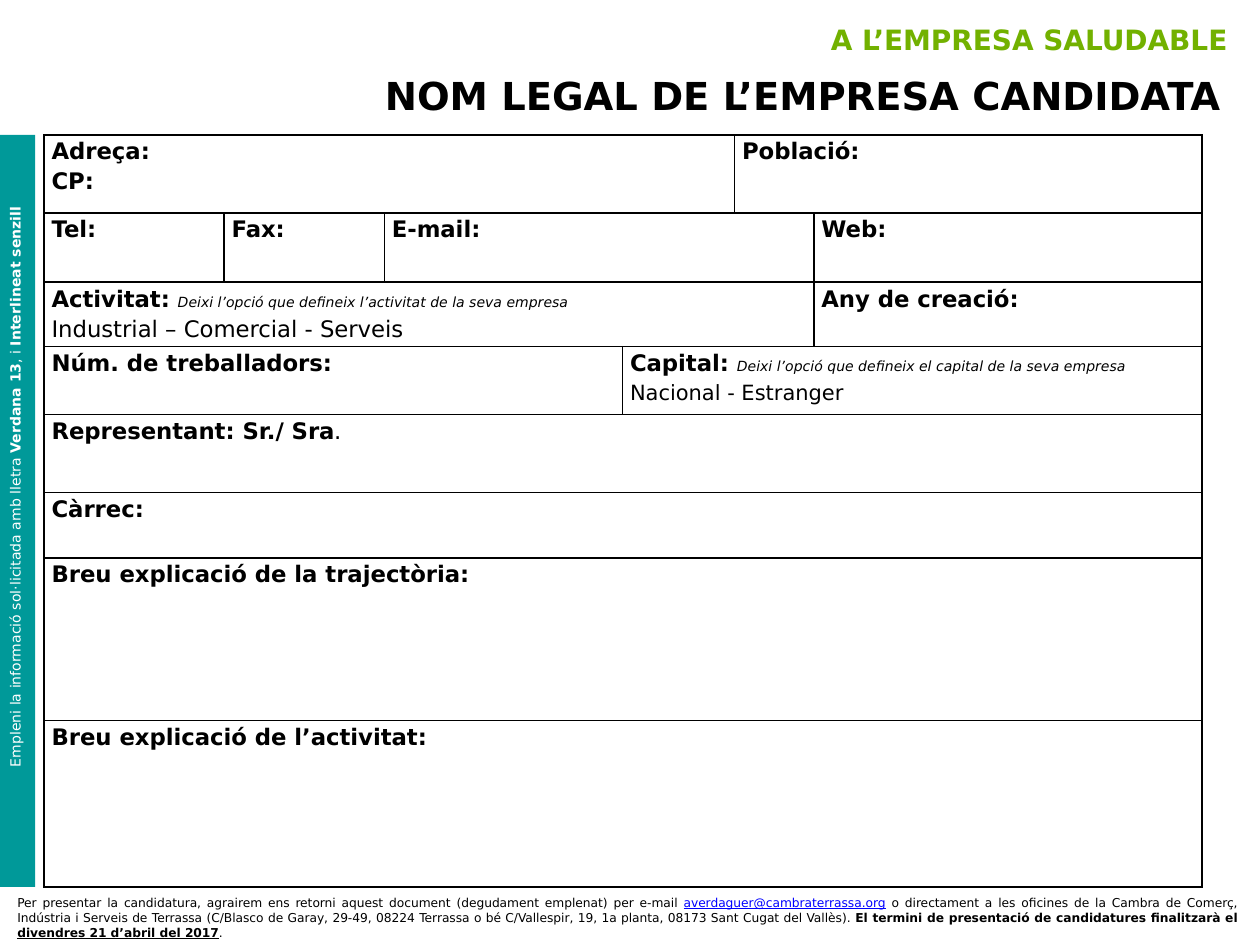
from lxml import etree
from pptx import Presentation
from pptx.dml.color import RGBColor
from pptx.enum.shapes import MSO_SHAPE
from pptx.enum.text import MSO_ANCHOR, PP_ALIGN
from pptx.oxml.ns import qn
from pptx.util import Cm, Pt

FONT = "DejaVu Sans"
GREEN = RGBColor(0x72, 0xB1, 0x00)
TEAL = RGBColor(0x00, 0x99, 0x99)
BLACK = RGBColor(0x00, 0x00, 0x00)
WHITE = RGBColor(0xFF, 0xFF, 0xFF)
BLUE = RGBColor(0x00, 0x00, 0xFF)
RECTANGLE = MSO_SHAPE.RECTANGLE
TOP = MSO_ANCHOR.TOP
LEFT, CENTER, RIGHT, JUSTIFY = PP_ALIGN.LEFT, PP_ALIGN.CENTER, PP_ALIGN.RIGHT, PP_ALIGN.JUSTIFY

BOLD = {"bold": True}
HINT = {"size": Pt(8), "italic": True}
TABLE_TOP = 2.72
COLUMN_WIDTHS = [3.63, 3.23, 4.8, 2.26, 1.6, 7.82]
ROW_HEIGHTS = [1.57, 1.4, 1.3, 1.37, 1.57, 1.32, 3.28, 3.35]


def label(text):
    return [(text, BOLD)]


# Each row lists its cells as (columns spanned, paragraphs).
FORM_ROWS = [
    [(4, [label("Adreça:"), label("CP:")]), (2, [label("Població:")])],
    [(1, [label("Tel:")]), (1, [label("Fax:")]), (3, [label("E-mail:")]), (1, [label("Web:")])],
    [
        (5, [
            [("Activitat: ", BOLD),
             ("Deixi l’opció que defineix l’activitat de la seva empresa", HINT)],
            [("Industrial – Comercial - Serveis", {})],
        ]),
        (1, [label("Any de creació:")]),
    ],
    [
        (3, [label("Núm. de treballadors:")]),
        (3, [
            [("Capital: ", BOLD),
             ("Deixi l’opció que defineix el capital de la seva empresa", HINT)],
            [("Nacional - Estranger", {"size": Pt(12)})],
        ]),
    ],
    [(6, [[("Representant: Sr./ Sra", BOLD), (".", {})]])],
    [(6, [label("Càrrec:")])],
    [(6, [label("Breu explicació de la trajectòria:")])],
    [(6, [label("Breu explicació de l’activitat:")])],
]


class FormSlide:
    def __init__(self, slide):
        self.slide = slide

    def add_text(self, frame, paragraphs, size, color=BLACK, alignment=LEFT, spacing=1.0):
        """Fill a text frame with paragraphs given as lists of (text, format)."""
        frame.word_wrap = True
        for index, runs in enumerate(paragraphs):
            paragraph = frame.add_paragraph() if index else frame.paragraphs[0]
            paragraph.alignment = alignment
            paragraph.line_spacing = spacing
            for text, changes in runs:
                run = paragraph.add_run()
                run.text = text
                values = {"name": FONT, "size": Pt(size), "color": color, **changes}
                run.font.color.rgb = values.pop("color")
                for name, value in values.items():
                    setattr(run.font, name, value)

    def heading(self, text, left, top, width, height, size, color):
        box = self.slide.shapes.add_textbox(Cm(left), Cm(top), Cm(width), Cm(height))
        self.add_text(box.text_frame, [label(text)], size, color, RIGHT)

    def rectangle(self, left, top, width, height, fill, line=None):
        shape = self.slide.shapes.add_shape(RECTANGLE, Cm(left), Cm(top), Cm(width), Cm(height))
        shape.shadow.inherit = False
        shape.fill.solid()
        shape.fill.fore_color.rgb = fill
        if line is None:
            shape.line.fill.background()
        else:
            shape.line.color.rgb = line
            shape.line.width = Pt(0.75)
        shape.text_frame.vertical_anchor = TOP
        return shape

    def border(self, cell):
        properties = cell._tc.get_or_add_tcPr()
        for side in ("a:lnL", "a:lnR", "a:lnT", "a:lnB"):
            line = etree.SubElement(properties, qn(side), w=str(Pt(1)))
            fill = etree.SubElement(line, qn("a:solidFill"))
            etree.SubElement(fill, qn("a:srgbClr"), val=str(BLACK))

    def form(self, left, top, widths, heights, rows):
        frame = self.slide.shapes.add_table(
            len(heights), len(widths), Cm(left), Cm(top), Cm(sum(widths)), Cm(sum(heights)))
        table = frame.table
        table.first_row = table.horz_banding = False
        for column, width in zip(table.columns, widths):
            column.width = Cm(width)
        for row, height in zip(table.rows, heights):
            row.height = Cm(height)
        for cell in table.iter_cells():
            self.border(cell)
            cell.fill.background()
            cell.margin_left = cell.margin_right = Cm(0.15)
            cell.margin_top = cell.margin_bottom = 0
        for row_index, row in enumerate(rows):
            column_index = 0
            for span, paragraphs in row:
                cell = table.cell(row_index, column_index)
                column_index += span
                if span > 1:
                    cell.merge(table.cell(row_index, column_index - 1))
                self.add_text(cell.text_frame, paragraphs, 13, spacing=1.15)


def main():
    presentation = Presentation()
    presentation.slide_width, presentation.slide_height = Cm(25.4), Cm(19.05)
    blank_layout = presentation.slide_layouts[6]
    page = FormSlide(presentation.slides.add_slide(blank_layout))

    page.heading("A L’EMPRESA SALUDABLE", 6.71, 0.33, 18.29, 0.94, 16, GREEN)

    footer = page.rectangle(0.1, 17.93, 25.1, 1.02, WHITE, WHITE)
    page.add_text(footer.text_frame, [[
        ("Per presentar la candidatura, agrairem ens retorni aquest document "
         "(degudament emplenat) per e-mail ", {}),
        ("averdaguer@cambraterrassa.org", {"color": BLUE, "underline": True}),
        (" o directament a les oficines de la Cambra de Comerç, Indústria i Serveis de "
         "Terrassa (C/Blasco de Garay, 29-49, 08224 Terrassa o bé C/Vallespir, 19, "
         "1a planta, 08173 Sant Cugat del Vallès). ", {}),
        ("El termini de presentació de candidatures finalitzarà el ", BOLD),
        ("divendres 21 d’abril del 2017", {"bold": True, "underline": True}),
        (".", {}),
    ]], 7, alignment=JUSTIFY)

    page.heading("NOM LEGAL DE L’EMPRESA CANDIDATA ", 6.91, 1.32, 18.21, 1.19, 22, BLACK)
    page.form(0.89, TABLE_TOP, COLUMN_WIDTHS, ROW_HEIGHTS, FORM_ROWS)

    page.rectangle(0, TABLE_TOP, 0.71, sum(ROW_HEIGHTS), TEAL)
    side_note = page.rectangle(-5.74, 9.47, 12.19, 0.69, TEAL)
    side_note.rotation = 270
    page.add_text(side_note.text_frame, [[
        ("Empleni la informació sol·licitada amb lletra ", {}),
        ("Verdana 13", BOLD),
        (", i ", {}),
        ("Interlineat senzill", BOLD),
    ]], 8, WHITE, CENTER)

    presentation.save("out.pptx")


if __name__ == "__main__":
    main()
